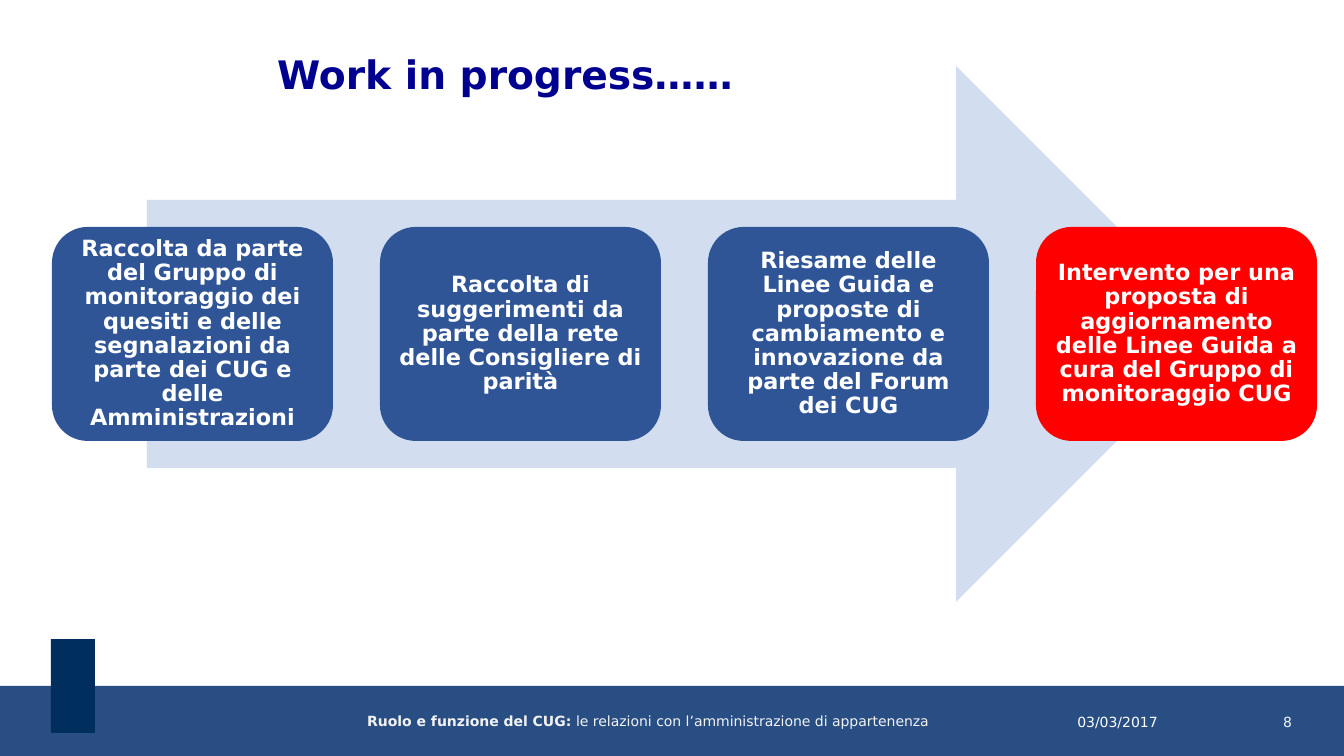
from lxml.etree import SubElement
from pptx import Presentation
from pptx.dml.color import RGBColor
from pptx.enum.shapes import MSO_SHAPE
from pptx.enum.text import MSO_ANCHOR, MSO_AUTO_SIZE, PP_ALIGN
from pptx.oxml.ns import qn
from pptx.util import Pt

# Content
TITLE = "Work in progress……"
STEPS = [
    "Raccolta da parte del Gruppo di monitoraggio dei quesiti e delle "
    "segnalazioni da parte dei CUG e delle Amministrazioni",
    "Raccolta di suggerimenti da parte della rete delle Consigliere di parità",
    "Riesame delle Linee Guida e proposte di cambiamento e innovazione "
    "da parte del Forum dei CUG",
    "Intervento per una proposta di aggiornamento delle Linee Guida "
    "a cura del Gruppo di monitoraggio CUG",
]
FOOTER = [("Ruolo e funzione del CUG: ", True),
          ("le relazioni con l’amministrazione di appartenenza", False)]
DATE = "03/03/2017"
PAGE = "8"

# Look
FONT = "DejaVu Sans"
WHITE = RGBColor(0xFF, 0xFF, 0xFF)
PALE = RGBColor(0xF2, 0xF2, 0xF2)
NAVY = RGBColor(0x00, 0x00, 0x90)
BAND = RGBColor(0x28, 0x4E, 0x83)
DARK = RGBColor(0x00, 0x2E, 0x5D)
SKY = RGBColor(0xD2, 0xDE, 0xEF)
BLUE = RGBColor(0x2F, 0x55, 0x97)
RED = RGBColor(0xFF, 0x00, 0x00)

# Lengths in px
SCALE = 914400 / 100.8
WIDTH, HEIGHT = 1344, 756
LEFT, TOP, STEP_W, STEP_H, PITCH = 52, 227, 281, 214, 328
FOOT_Y = 714


def px(num):
    return round(num * SCALE)


def place(shape, x, y, w, h):
    shape.left, shape.top, shape.width, shape.height = map(px, (x, y, w, h))
    return shape


def draw(kind, x, y, w, h, color):
    shape = slide.shapes.add_shape(kind, *map(px, (x, y, w, h)))
    shape.shadow.inherit = False
    shape.fill.solid()
    shape.fill.fore_color.rgb = color
    shape.line.fill.background()
    return shape


def write(shape, text, size=10, color=WHITE, bold=False, align=PP_ALIGN.CENTER,
          anchor=MSO_ANCHOR.TOP, inset=(0, 0), wrap=True, lead=1.0):
    """Fill a shape with one paragraph; text is a string or (text, bold) runs."""
    frame = shape.text_frame
    frame.auto_size = MSO_AUTO_SIZE.NONE
    frame.word_wrap = wrap
    frame.vertical_anchor = anchor
    frame.margin_left = frame.margin_right = px(inset[0])
    frame.margin_top = frame.margin_bottom = px(inset[1])
    par = frame.paragraphs[0]
    par.alignment, par.line_spacing, par.space_before = align, lead, Pt(0)
    for part, heavy in [(text, bold)] if isinstance(text, str) else text:
        run = par.add_run()
        run.text = part
        font = run.font
        font.name, font.size, font.bold = FONT, Pt(size), heavy
        font.color.rgb = color
    return par


deck = Presentation()
deck.slide_width, deck.slide_height = px(WIDTH), px(HEIGHT)
slide = deck.slides.add_slide(deck.slide_layouts[1])
title, body = slide.placeholders

# Footer band and block
draw(MSO_SHAPE.RECTANGLE, 0, 686, WIDTH, 70, BAND)
draw(MSO_SHAPE.RECTANGLE, 51, 639, 44, 94, DARK)

# Arrow and steps, the last one in red
draw(MSO_SHAPE.RIGHT_ARROW, 147, 66, 1077, 536, SKY)
for i, step in enumerate(STEPS):
    fill = RED if i == len(STEPS) - 1 else BLUE
    box = draw(MSO_SHAPE.ROUNDED_RECTANGLE, LEFT + i * PITCH, TOP,
               STEP_W, STEP_H, fill)
    write(box, step, size=16, bold=True, anchor=MSO_ANCHOR.MIDDLE,
          inset=(7, 7), lead=0.9)

# Title
write(place(title, 164, 45, 682, 57), TITLE, size=28, color=NAVY, bold=True,
      inset=(10, 5))

# Footer text without bullet
par = write(place(body, 297, FOOT_Y, 702, 25), FOOTER, color=PALE, wrap=False,
            lead=0.9)
props = par._p.get_or_add_pPr()
props.set("marL", "0")
props.set("indent", "0")
SubElement(props, qn("a:buNone"))

# Date and page number
date = slide.shapes.add_textbox(px(1038), px(FOOT_Y), px(159), px(40))
write(date, DATE, wrap=False)
page = slide.shapes.add_textbox(px(1132), px(FOOT_Y), px(160), px(40))
write(page, PAGE, color=PALE, align=PP_ALIGN.RIGHT)

# Placeholders go in front of the drawn shapes
for holder in (body, title):
    slide.shapes._spTree.append(holder._element)

deck.save("out.pptx")
